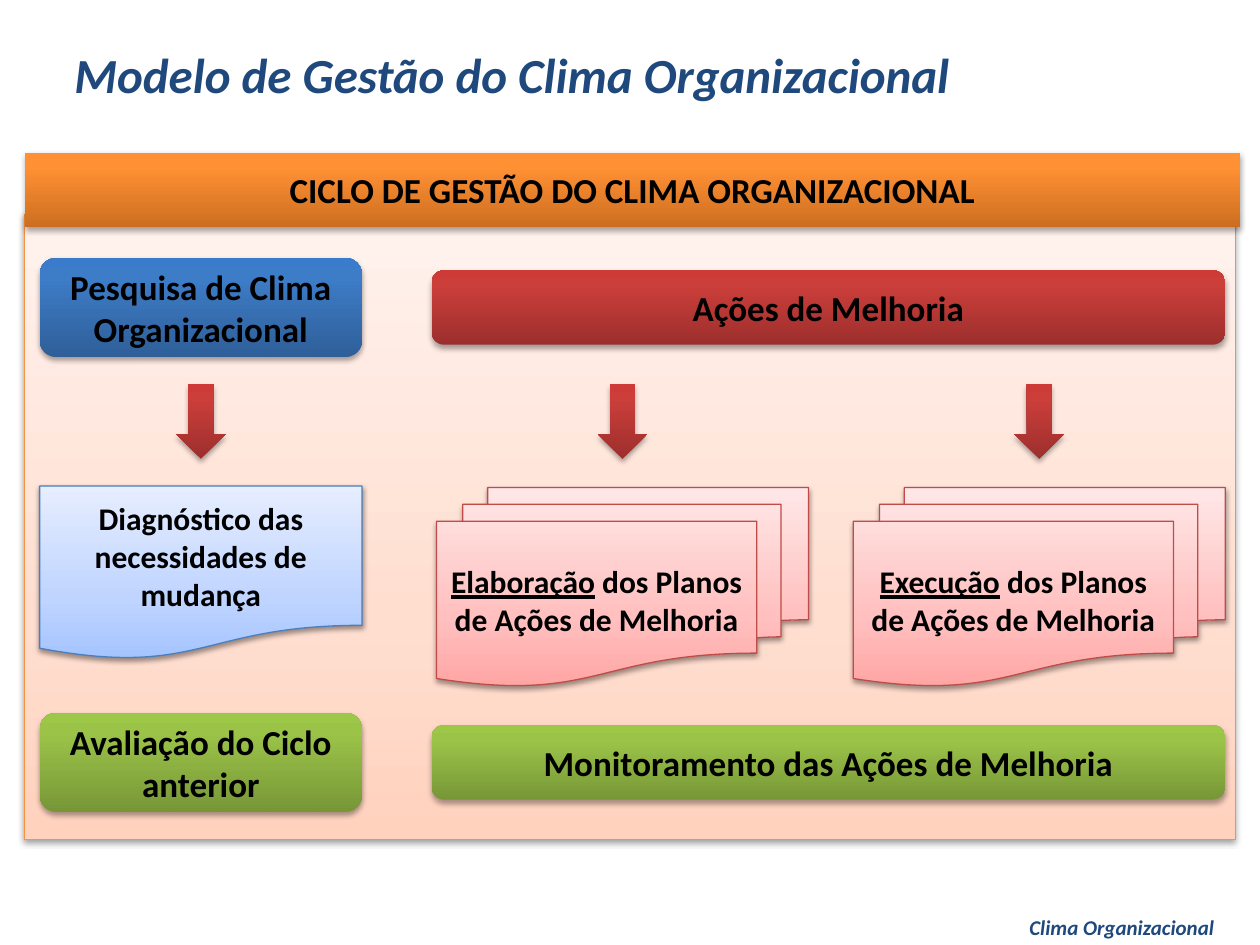
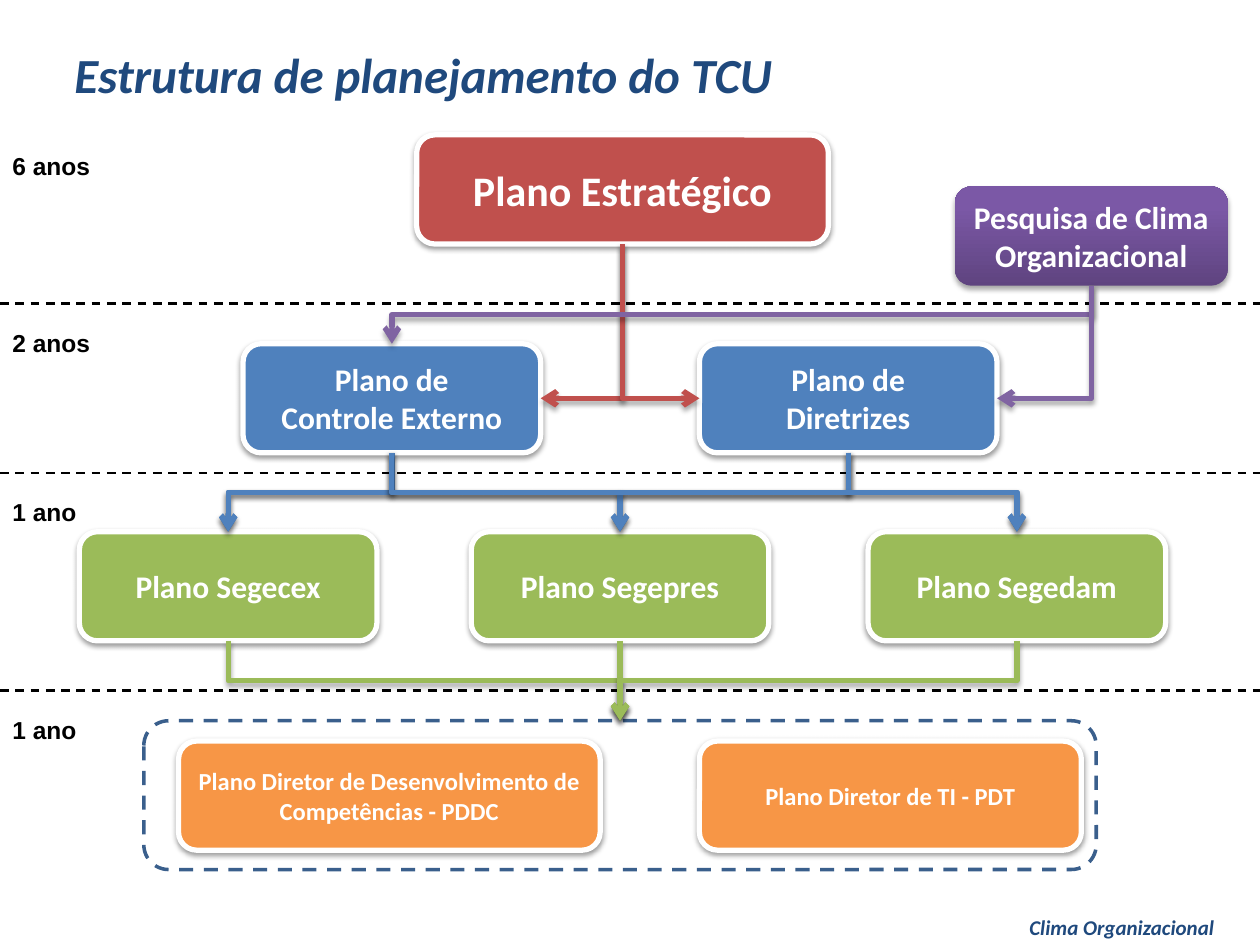
import copy

import lxml.etree
import pptx
import pptx.dml.color
import pptx.enum.dml
import pptx.enum.shapes
import pptx.enum.text
import pptx.oxml.ns
import pptx.util

Cm = pptx.util.Cm
Pt = pptx.util.Pt
qn = pptx.oxml.ns.qn
SHAPES = pptx.enum.shapes.MSO_SHAPE
CONNECTORS = pptx.enum.shapes.MSO_CONNECTOR
DASH = pptx.enum.dml.MSO_LINE.DASH
TOP, LEFT, BOTTOM, RIGHT = range(4)

NAVY, BLACK, WHITE = "1F497D", "000000", "FFFFFF"
RED, BLUE, GREEN, ORANGE, PURPLE = "C0504D", "4F81BD", "9BBB59", "F79646", "8064A2"
STRONG_POSITIONS = (0, 0.8, 1)
PALE_POSITIONS = (0, 0.35, 1)
STRONG = {
    "blue": ("2F5F99", "3D7CC7", "3A7CCB"),
    "red": ("9C2F2D", "CB3E3A", "CE3B37"),
    "green": ("779737", "9BC348", "9DC746"),
    "orange": ("CC6E20", "FF9034", "FF9136"),
    "purple": ("5F4480", "7B58A6", "7C57A8"),
}
PALE = {
    "blue": (("A4C4FF", "BFD4FF", "E6EEFF"), "4B7EBC"),
    "red": (("FFA6A5", "FFC0BF", "FFE7E7"), "BF4C48"),
    "orange": (("FFD2BD", "FFDED0", "FFF2ED"), "F69240"),
}
STRONG_SHADOW = {"alpha": 35, "distance": 1.8}
PALE_SHADOW = {"alpha": 38, "distance": 1.6}
TITLE_FONT = {"name": "Calibri", "size": Pt(28), "bold": True, "italic": True}
FOOTER_FONT = {**TITLE_FONT, "size": Pt(12)}
LABEL_FONT = {"name": "Arial", "size": Pt(14), "bold": True}


def rgb(value):
    """Turn a hex string into a colour."""
    return pptx.dml.color.RGBColor.from_string(value)


def box_font(size):
    """Give the font format of a box."""
    return {"name": "Calibri", "size": Pt(size), "bold": True}


def write(shape, lines, font, color, align=None, underlined=""):
    """Write one paragraph per line, with an optional underlined opening word."""
    frame = shape.text_frame
    for index, line in enumerate(lines):
        paragraph = frame.add_paragraph() if index else frame.paragraphs[0]
        paragraph.alignment = align
        for text, underline in ((underlined, True), (line, False)):
            if not text:
                continue
            run = paragraph.add_run()
            run.text = text
            for name, value in {**font, "underline": underline}.items():
                setattr(run.font, name, value)
            run.font.color.rgb = rgb(color)


def add_text(slide, box, text, font, color, **frame_format):
    """Add a text box of one line."""
    shape = slide.shapes.add_textbox(*map(Cm, box))
    for name, value in frame_format.items():
        setattr(shape.text_frame, name, value)
    write(shape, [text], font, color)


def drop_shadow(properties, alpha, distance):
    """Put a soft shadow below a shape or connector."""
    effects = properties.find(qn("a:effectLst"))
    if effects is None:
        effects = lxml.etree.SubElement(properties, qn("a:effectLst"))
    shadow = lxml.etree.SubElement(
        effects, qn("a:outerShdw"), blurRad=str(Pt(3.1)), dist=str(Pt(distance)),
        dir="5400000", rotWithShape="0")
    color = lxml.etree.SubElement(shadow, qn("a:srgbClr"), val=BLACK)
    lxml.etree.SubElement(color, qn("a:alpha"), val=str(alpha * 1000))


def fill_gradient(shape, colors, positions):
    """Fill a shape with a three-stop gradient rising from its base."""
    shape.fill.gradient()
    shape.fill.gradient_angle = 90
    first = shape._element.spPr.find(".//" + qn("a:gs"))
    first.addnext(copy.deepcopy(first))
    for stop, color, position in zip(shape.fill.gradient_stops, colors, positions):
        stop.color.rgb = rgb(color)
        stop.position = position


def add_box(slide, kind, box, lines=(), size=20, color=BLACK, underlined=""):
    """Add a preset shape with centred text."""
    shape = slide.shapes.add_shape(kind, *map(Cm, box))
    shape.shadow.inherit = False
    shape.text_frame.word_wrap = True
    shape.text_frame.vertical_anchor = pptx.enum.text.MSO_ANCHOR.MIDDLE
    write(shape, lines, box_font(size), color, pptx.enum.text.PP_ALIGN.CENTER, underlined)
    return shape


def strong_box(slide, kind, box, hue, *text, **text_format):
    """Add a borderless box in a strong gradient."""
    shape = add_box(slide, kind, box, text, **text_format)
    fill_gradient(shape, STRONG[hue], STRONG_POSITIONS)
    shape.line.fill.background()
    drop_shadow(shape._element.spPr, **STRONG_SHADOW)
    return shape


def pale_box(slide, kind, box, hue, *text, **text_format):
    """Add a thinly outlined box in a pale gradient."""
    shape = add_box(slide, kind, box, text, **text_format)
    colors, outline = PALE[hue]
    fill_gradient(shape, colors, PALE_POSITIONS)
    shape.line.color.rgb = rgb(outline)
    shape.line.width = Pt(0.75)
    drop_shadow(shape._element.spPr, **PALE_SHADOW)


def plan_box(slide, box, color, *text, size=18):
    """Add a flat plan box with a white border."""
    shape = add_box(slide, SHAPES.ROUNDED_RECTANGLE, box, text, size, WHITE)
    shape.fill.solid()
    shape.fill.fore_color.rgb = rgb(color)
    shape.line.color.rgb = rgb(WHITE)
    shape.line.width = Pt(3)
    drop_shadow(shape._element.spPr, **PALE_SHADOW)
    return shape


def turn_elbow(connector, preset):
    """Make an elbow leave its start downwards."""
    start_x, start_y = connector.begin_x, connector.begin_y
    across, down = connector.end_x - start_x, connector.end_y - start_y
    transform = connector._element.spPr.find(qn("a:xfrm"))
    for flip in ("flipH", "flipV"):
        transform.attrib.pop(flip, None)
    transform.set("rot", str((90 if across < 0 else 270) * 60000))
    if across > 0:
        transform.set("flipH", "1")
    connector.left = start_x + (across - down) // 2
    connector.top = start_y + (down - abs(across)) // 2
    connector.width, connector.height = down, abs(across)
    connector._element.spPr.find(qn("a:prstGeom")).set("prst", preset)


def link(slide, start, end, side, color):
    """Join the base of one box to a side of another with an arrow."""
    kind = CONNECTORS.ELBOW
    if side == TOP and start.left + start.width // 2 == end.left + end.width // 2:
        kind = CONNECTORS.STRAIGHT
    connector = slide.shapes.add_connector(kind, 0, 0, 0, 0)
    connector.begin_connect(start, BOTTOM)
    connector.end_connect(end, side)
    if kind == CONNECTORS.ELBOW:
        turn_elbow(connector, "bentConnector3" if side == TOP else "bentConnector2")
    connector.line.color.rgb = rgb(color)
    connector.line.width = Pt(3)
    properties = connector._element.spPr
    lxml.etree.SubElement(properties.find(qn("a:ln")), qn("a:tailEnd"), type="arrow")
    drop_shadow(properties, **STRONG_SHADOW)


def add_slide(presentation, title):
    """Add a blank slide with the shared title and footer."""
    slide = presentation.slides.add_slide(presentation.slide_layouts[6])
    add_text(slide, (20.5, 18.31, 4.29, 0.76), "Clima Organizacional", FOOTER_FONT, NAVY,
             word_wrap=False)
    add_text(slide, (1.5, 0.91, 22.4, 1.17), title, TITLE_FONT, NAVY, word_wrap=True,
             vertical_anchor=pptx.enum.text.MSO_ANCHOR.MIDDLE,
             margin_left=0, margin_right=0, margin_top=0, margin_bottom=0)
    return slide


def down_arrow(slide, center, top):
    """Add a red arrow centred on a column."""
    strong_box(slide, SHAPES.DOWN_ARROW, (center - 0.5, top, 1, 1.5), "red")


def survey_column(slide, left, top, width):
    """Draw the survey, its diagnosis and the review of the last cycle."""
    rounded = SHAPES.ROUNDED_RECTANGLE
    strong_box(slide, rounded, (left, top, width, 2), "blue", "Pesquisa de Clima Organizacional")
    pale_box(slide, SHAPES.FLOWCHART_DOCUMENT, (left, top + 4.6, width, 3.5), "blue",
             "Diagnóstico das necessidades de mudança", size=18)
    down_arrow(slide, left + width / 2, top + 2.55)
    strong_box(slide, rounded, (left, top + 9.17, width, 2), "green", "Avaliação do Ciclo anterior")


def action_column(slide, left, top, width):
    """Draw the improvement actions, their plans and the monitoring."""
    for offset, hue, text in ((0.25, "red", "Ações de Melhoria"),
                              (9.42, "green", "Monitoramento das Ações de Melhoria")):
        strong_box(slide, SHAPES.ROUNDED_RECTANGLE, (left, top + offset, width, 1.5), hue, text)
    plan_width = 7.5
    for plan_left, phase in ((left + 0.1, "Elaboração"), (left + width - plan_width, "Execução")):
        pale_box(slide, SHAPES.FLOWCHART_MULTIDOCUMENT, (plan_left, top + 4.63, plan_width, 4),
                 "red", " dos Planos de Ações de Melhoria", size=18, underlined=phase)
        down_arrow(slide, plan_left + plan_width / 2, top + 2.55)


def build_cycle(presentation):
    """Build the slide of the climate management cycle."""
    slide = add_slide(presentation, "Modelo de Gestão do Clima Organizacional")
    process = SHAPES.FLOWCHART_PROCESS
    pale_box(slide, process, (0.5, 4.32, 24.4, 12.6), "orange")
    strong_box(slide, process, (0.5, 3.08, 24.5, 1.5), "orange",
               "CICLO DE GESTÃO DO CLIMA ORGANIZACIONAL")
    survey_column(slide, 0.8, 5.2, 6.5)
    action_column(slide, 8.7, 5.2, 16)


def horizon(slide, top, text):
    """Label a planning horizon."""
    add_text(slide, (0, top, 2.5, 0.86), text, LABEL_FONT, BLACK, word_wrap=True)


def divider(slide, top):
    """Draw a dashed line across the slide."""
    line = slide.shapes.add_connector(CONNECTORS.STRAIGHT, 0, Cm(top), Cm(25.4), Cm(top))
    line.line.color.rgb = rgb(BLACK)
    line.line.width = Pt(1.25)
    line.line.dash_style = DASH
    lxml.etree.SubElement(line._element.spPr, qn("a:effectLst"))


def plan_row(slide, top, color, plans):
    """Draw a row of equal plans from pairs of left edge and lines."""
    return [plan_box(slide, (left, top, 6, 2.2), color, *lines) for left, lines in plans]


def director_group(slide, left, top):
    """Draw the director plans inside a dashed frame."""
    for offset, width, text in (
            (0.7, 8.5, "Plano Diretor de Desenvolvimento de Competências - PDDC"),
            (11.2, 7.7, "Plano Diretor de TI - PDT")):
        plan_box(slide, (left + offset, top + 0.41, width, 2.2), ORANGE, text, size=14)
    frame = add_box(slide, SHAPES.ROUNDED_RECTANGLE, (left, top, 19.2, 3))
    frame.fill.background()
    frame.line.color.rgb = rgb("3A5F8C")
    frame.line.width = Pt(2)
    frame.line.dash_style = DASH
    return frame


def build_structure(presentation):
    """Build the slide of the planning structure."""
    slide = add_slide(presentation, "Estrutura de planejamento do TCU")
    strategy = plan_box(slide, (8.4, 2.72, 8.3, 2.2), RED, "Plano Estratégico", size=24)
    control, guidelines = plan_row(slide, 6.93, BLUE, (
        (4.9, ("Plano de", "Controle Externo")), (14.1, ("Plano de", "Diretrizes"))))
    units = plan_row(slide, 10.72, GREEN, (
        (1.6, ["Plano Segecex"]), (9.5, ["Plano Segepres"]), (17.5, ["Plano Segedam"])))
    directors = director_group(slide, 2.9, 14.53)
    horizon(slide, 2.92, "6 anos")
    for top, text in ((6.12, "2 anos"), (9.53, "1 ano"), (13.92, "1 ano")):
        divider(slide, top)
        horizon(slide, top + 0.36, text)
    link(slide, strategy, control, RIGHT, RED)
    link(slide, strategy, guidelines, LEFT, RED)
    for plan in (guidelines, control):
        for unit in units:
            link(slide, plan, unit, TOP, BLUE)
    for unit in units:
        link(slide, unit, directors, TOP, GREEN)
    survey = strong_box(slide, SHAPES.ROUNDED_RECTANGLE, (19.25, 3.76, 5.5, 2), "purple",
                        "Pesquisa de Clima Organizacional", size=18, color=WHITE)
    link(slide, survey, control, TOP, PURPLE)
    link(slide, survey, guidelines, RIGHT, PURPLE)


def main():
    """Build and save the presentation."""
    presentation = pptx.Presentation()
    presentation.slide_width, presentation.slide_height = Cm(25.4), Cm(19.05)
    build_cycle(presentation)
    build_structure(presentation)
    presentation.save("out.pptx")


if __name__ == "__main__":
    main()
